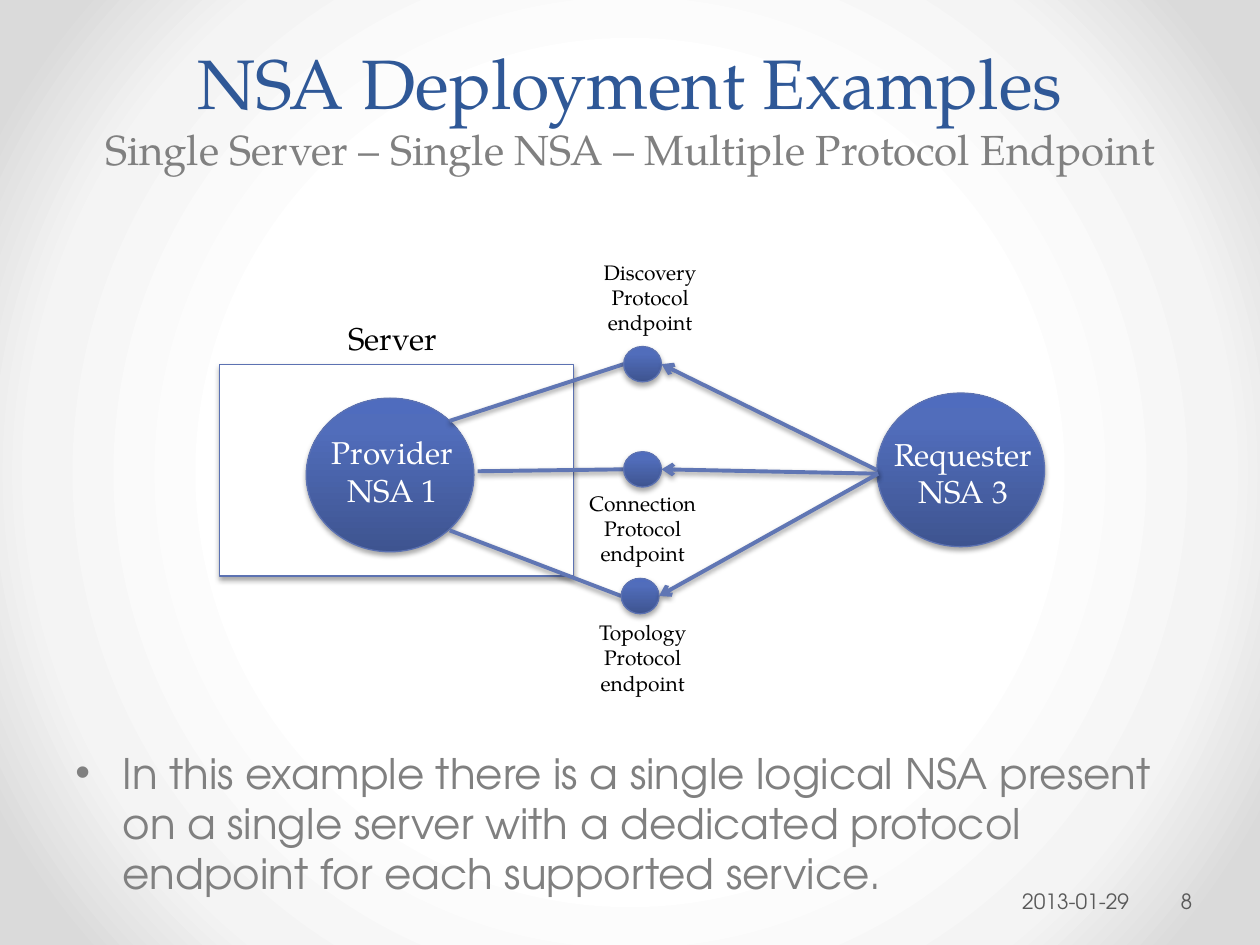
"""Build a slide on an NSA deployment with one protocol endpoint per service."""
import pptx
import pptx.dml.color
import pptx.enum.shapes
import pptx.enum.text
import pptx.oxml
import pptx.oxml.ns
import pptx.util

Pt = pptx.util.Pt
SHAPES = pptx.enum.shapes.MSO_SHAPE
ALIGN = pptx.enum.text.PP_ALIGN
ANCHOR = pptx.enum.text.MSO_ANCHOR
SERIF = "TeX Gyre Pagella"
SANS = "TeX Gyre Adventor"
COLORS = {
    "title": "2F5897", "grey": "808080", "footer": "595959",
    "black": "000000", "white": "FFFFFF", "outline": "5C72B2", "link": "6076B4",
}
BACKDROP_STOPS = [(50, "FFFFFF"), (76, "F4F4F4"), (92, "DADADA")]
NODE_STOPS = [(0, "3E5490"), (80, "516DBB"), (100, "4F6CBE")]
UPWARD = '<a:lin ang="16200000" scaled="0"/>'
CIRCULAR = ('<a:path path="circle"><a:fillToRect l="50000" t="50000" '
            'r="50000" b="50000"/></a:path>')
NODE_SIZE = (95.8, 87.8)
DOT_WIDTH, DOT_HEIGHT = 21.6, 20.2
ENDPOINTS = [
    ("Discovery", (356.4, 208.1), (257, 240.5), (501.1, 268.6), (327.6, 144.7, 87.8)),
    ("Connection", (356.4, 268.2), (272.9, 269.3), (501.8, 270.7), (322.6, 276.5, 89.3)),
    ("Topology", (355, 340.6), (257, 303.1), (501.8, 270.7), (322.6, 350.6, 89.3)),
]


def rgb(name):
    """Return the named colour."""
    return pptx.dml.color.RGBColor.from_string(COLORS[name])


def drawing_xml(tag, attributes, content):
    """Parse one DrawingML element."""
    namespace = pptx.oxml.ns.nsdecls("a")
    return pptx.oxml.parse_xml(f"<a:{tag} {namespace} {attributes}>{content}</a:{tag}>")


def set_gradient(fill, owner, stops, direction):
    """Give the owner of a fill a gradient with any number of stops."""
    fill.solid()
    solid = owner.find(pptx.oxml.ns.qn("a:solidFill"))
    stop_list = "".join(
        f'<a:gs pos="{position * 1000}"><a:srgbClr val="{color}"/></a:gs>'
        for position, color in stops)
    gradient = drawing_xml(
        "gradFill", 'rotWithShape="1"', f"<a:gsLst>{stop_list}</a:gsLst>{direction}")
    owner.replace(solid, gradient)


def set_shadow(shape, opacity, distance):
    """Cast a soft shadow straight down."""
    shadow = (f'<a:outerShdw blurRad="{Pt(3.1)}" dist="{Pt(distance)}" dir="5400000" '
              f'rotWithShape="0"><a:srgbClr val="{COLORS["black"]}">'
              f'<a:alpha val="{opacity * 1000}"/></a:srgbClr></a:outerShdw>')
    shape.element.spPr.append(drawing_xml("effectLst", "", shadow))


def add_figure(slide, kind, left, top, width, height):
    """Add an outlined shape, white for a box and shaded for an ellipse."""
    shape = slide.shapes.add_shape(kind, Pt(left), Pt(top), Pt(width), Pt(height))
    if kind == SHAPES.OVAL:
        set_gradient(shape.fill, shape.element.spPr, NODE_STOPS, UPWARD)
    else:
        shape.fill.solid()
        shape.fill.fore_color.rgb = rgb("white")
    shape.line.color.rgb = rgb("outline")
    shape.line.width = Pt(0.75)
    set_shadow(shape, 35, 1.8)


def add_link(slide, start, end, arrow=False):
    """Add a straight link, with an arrowhead at its end on request."""
    link = slide.shapes.add_connector(
        pptx.enum.shapes.MSO_CONNECTOR.STRAIGHT, *(Pt(value) for value in start + end))
    link.line.color.rgb = rgb("link")
    link.line.width = Pt(2.25)
    if arrow:
        link.line._get_or_add_ln().append(drawing_xml("tailEnd", 'type="arrow"', ""))
    set_shadow(link, 38, 1.6)


def add_run(paragraph, text, size, font, color):
    """Add one formatted run."""
    run = paragraph.add_run()
    run.text = text
    run.font.size = Pt(size)
    run.font.name = font
    run.font.color.rgb = rgb(color)


def add_text(slide, box, text, size, font=SERIF, color="black",
             align=ALIGN.CENTER, anchor=ANCHOR.TOP, wrap=True):
    """Add a text box and return its frame."""
    frame = slide.shapes.add_textbox(*(Pt(value) for value in box)).text_frame
    frame.word_wrap = wrap
    frame.vertical_anchor = anchor
    paragraph = frame.paragraphs[0]
    paragraph.alignment = align
    add_run(paragraph, text, size, font, color)
    return frame


def add_bullet(paragraph, indent):
    """Give a paragraph a hanging bullet."""
    properties = paragraph._p.get_or_add_pPr()
    properties.set("marL", str(Pt(indent)))
    properties.set("indent", str(-Pt(indent)))
    properties.append(drawing_xml("buFont", 'typeface="Arial"', ""))
    properties.append(drawing_xml("buChar", 'char="•"', ""))


def add_title(slide):
    """Add the title with its subtitle line."""
    frame = add_text(slide, (36, 0, 648, 103), "NSA Deployment Examples", 40,
                     color="title", anchor=ANCHOR.BOTTOM)
    paragraph = frame.paragraphs[0]
    paragraph.add_line_break()
    add_run(paragraph, "Single Server – Single NSA – Multiple Protocol Endpoint",
            24, SERIF, "grey")


def add_diagram(slide):
    """Add the server, both agents and the endpoints between them."""
    add_figure(slide, SHAPES.RECTANGLE, 125.3, 208.1, 202.3, 121)
    add_text(slide, (191.5, 178.6, 65.5, 28.8), "Server", 18, wrap=False)
    add_figure(slide, SHAPES.OVAL, 175, 227.5, *NODE_SIZE)
    add_figure(slide, SHAPES.OVAL, 501.1, 224.6, *NODE_SIZE)
    add_text(slide, (175.7, 244.1, 97.2, 51.1), "Provider NSA 1", 18, color="white")
    add_text(slide, (501.8, 244.8, 97.2, 51.1), "Requester NSA 3", 18, color="white")
    for name, (left, middle), provider, requester, label in ENDPOINTS:
        add_link(slide, provider, (left, middle))
        add_figure(slide, SHAPES.OVAL, left, middle - DOT_HEIGHT / 2,
                   DOT_WIDTH, DOT_HEIGHT)
        add_link(slide, requester, (left + DOT_WIDTH, middle), arrow=True)
        add_text(slide, (*label, 51.1), f"{name} Protocol endpoint", 12)


def add_body(slide):
    """Add the bulleted explanation."""
    frame = add_text(
        slide, (36, 423.4, 648, 86.4),
        "In this example there is a single logical NSA present on a single server "
        "with a dedicated protocol endpoint for each supported service.",
        24, SANS, "grey", ALIGN.LEFT)
    paragraph = frame.paragraphs[0]
    paragraph.space_before = Pt(4.8)
    add_bullet(paragraph, 27)


def add_footer(slide):
    """Add the date and the slide number."""
    for text, left, width, align, inset in (
            ("2013-01-29", 484.6, 164.2, ALIGN.RIGHT, 7.2),
            ("8", 672.5, 43.9, ALIGN.LEFT, 2.2)):
        frame = add_text(slide, (left, 500.4, width, 28.8), text, 12, SANS,
                         "footer", align, ANCHOR.MIDDLE)
        frame.margin_left = Pt(inset)
        frame.margin_right = Pt(3.6)


def main():
    """Build and save the slide."""
    presentation = pptx.Presentation()
    presentation.slide_width = Pt(720)
    presentation.slide_height = Pt(540)
    slide = presentation.slides.add_slide(presentation.slide_layouts[6])
    fill = slide.background.fill
    fill.solid()
    owner = slide.element.find(".//" + pptx.oxml.ns.qn("p:bgPr"))
    set_gradient(fill, owner, BACKDROP_STOPS, CIRCULAR)
    add_title(slide)
    add_body(slide)
    add_footer(slide)
    add_diagram(slide)
    presentation.save("out.pptx")


if __name__ == "__main__":
    main()
